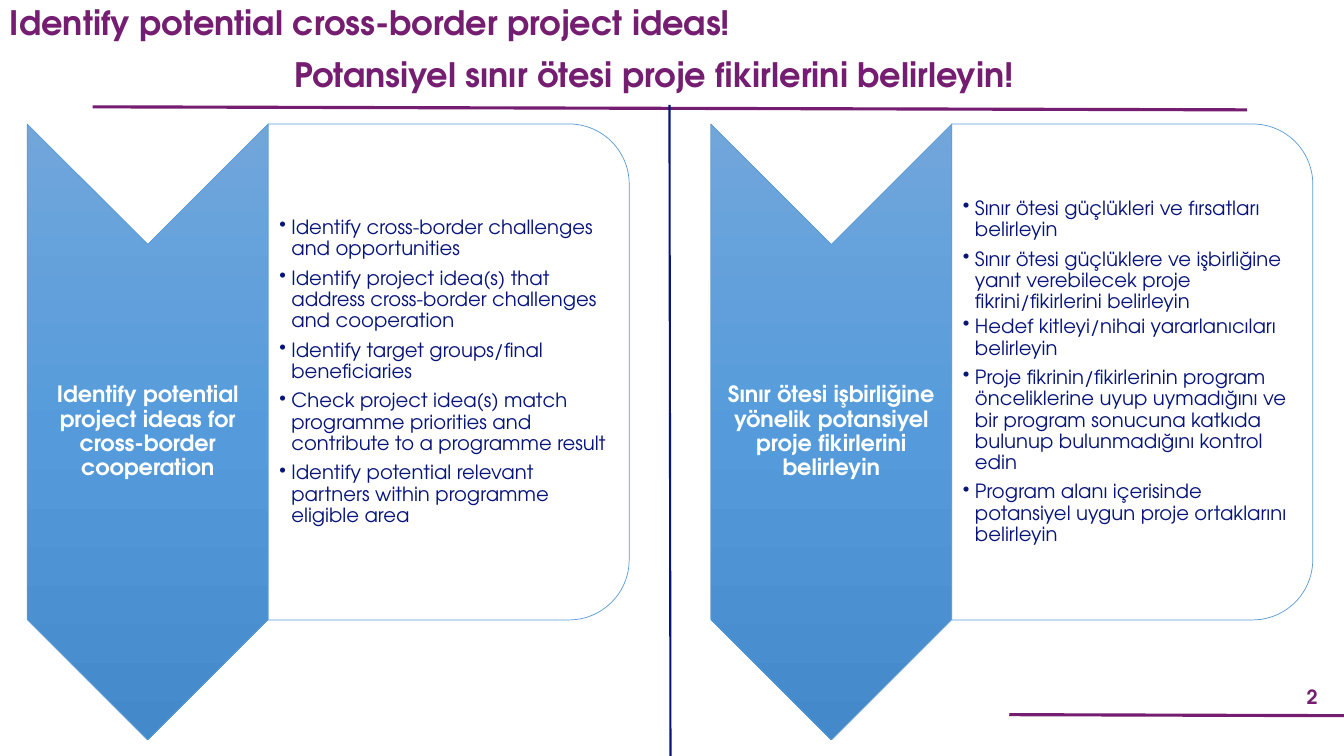
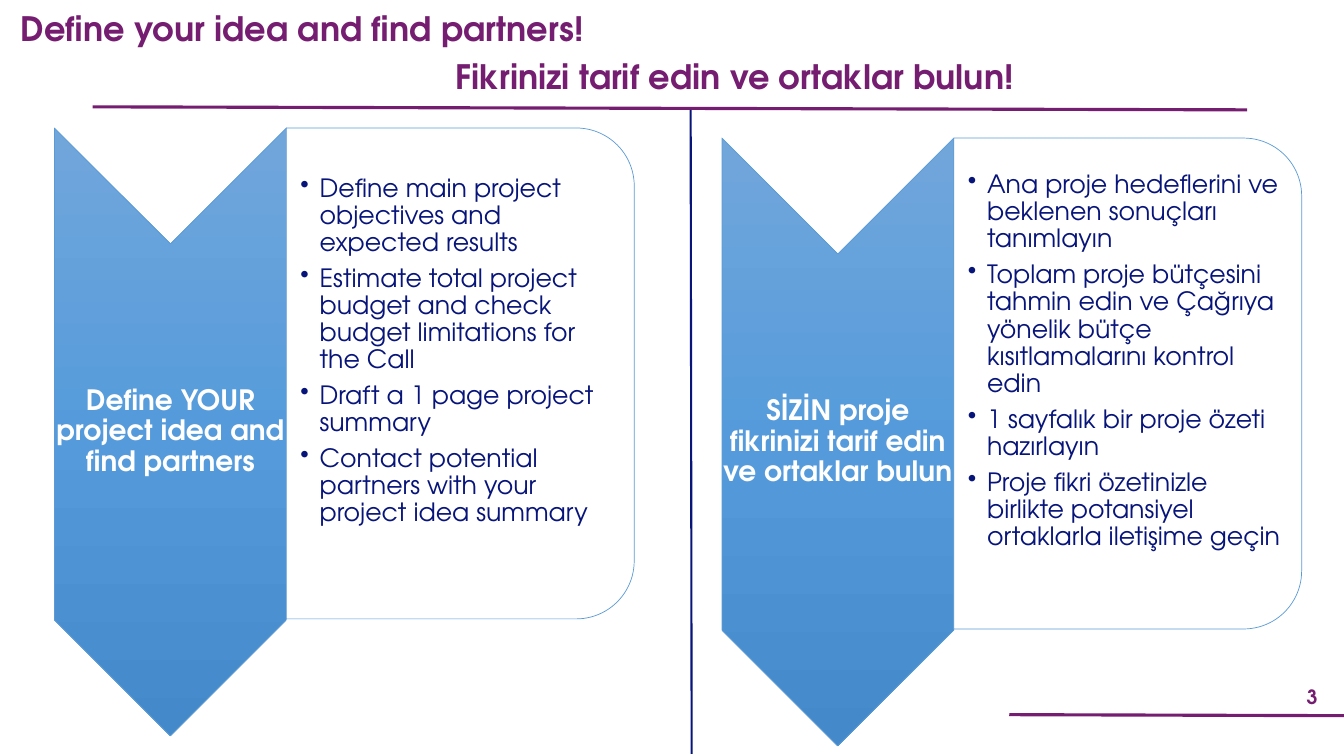
from copy import deepcopy
from dataclasses import dataclass

from lxml import etree
from pptx import Presentation
from pptx import util as u
from pptx.dml.color import RGBColor
from pptx.enum import shapes, text
from pptx.oxml.ns import qn


@dataclass(frozen=True)
class Theme:
    font: str = "TeX Gyre Adventor"
    purple: str = "751D70"
    navy: str = "07147A"
    white: str = "FFFFFF"
    outline: str = "5B9BD5"
    gradient: tuple[str, ...] = ("71A6DB", "559BDB", "448ACA")
    title_size: int = 24
    number_size: int = 14


@dataclass(frozen=True)
class Box:
    left: float
    top: float
    width: float
    height: float

    def emu(self) -> list[int]:
        return [u.Inches(v) for v in (self.left, self.top, self.width, self.height)]

    def before_quarter_turn(self) -> "Box":
        """Box that fills this area once it is rotated by 90 degrees."""
        shift = (self.width - self.height) / 2
        return Box(self.left + shift, self.top - shift, self.height, self.width)


@dataclass(frozen=True)
class Title:
    text: str
    left: float
    top: float


@dataclass(frozen=True)
class Column:
    left: float
    top: float
    heading: str
    bullets: list[str]
    tight_after: int | None = None  # index of a bullet with a smaller gap below


@dataclass(frozen=True)
class ColumnStyle:
    arrow_width: float
    arrow_height: float
    panel_width: float
    panel_height: float
    heading_size: int
    bullet_size: int
    bullet_indent: float
    left_inset: float
    bottom_inset: float


@dataclass(frozen=True)
class Page:
    number: int
    titles: list[Title]
    divider: tuple[float, float, float, float]
    style: ColumnStyle
    columns: list[Column]


THEME = Theme()
DEFAULT_INSETS = (0.1, 0.05, 0.1, 0.05)
THIN_INSETS = (0.01, 0.01, 0.01, 0.01)
BULLET_GAP, TIGHT_GAP = 6, 3
PANEL_MARGIN = 0.17

PAGES = [
    Page(
        number=2,
        titles=[
            Title("Identify potential cross-border project ideas!", 0, 0.01),
            Title("Potansiyel sınır ötesi proje fikirlerini belirleyin!", 2.82, 0.53),
        ],
        divider=(6.64, 1.04, 6.65, 7.5),
        style=ColumnStyle(2.39, 6.11, 3.58, 4.92, 16, 14, 0.12, 0.11, 0.01),
        columns=[
            Column(0.27, 1.23, "Identify potential project ideas for cross-border cooperation", [
                "Identify cross-border challenges and opportunities",
                "Identify project idea(s) that address cross-border challenges and cooperation",
                "Identify target groups/final beneficiaries",
                "Check project idea(s) match programme priorities and contribute to a programme result",
                "Identify potential relevant partners within programme eligible area",
            ]),
            Column(7.05, 1.23,
                   "Sınır ötesi işbirliğine yönelik potansiyel proje fikirlerini belirleyin", [
                "Sınır ötesi güçlükleri ve fırsatları belirleyin",
                "Sınır ötesi güçlüklere ve işbirliğine yanıt verebilecek proje "
                "fikrini/fikirlerini belirleyin",
                "Hedef kitleyi/nihai yararlanıcıları belirleyin",
                "Proje fikrinin/fikirlerinin program önceliklerine uyup uymadığını ve "
                "bir program sonucuna katkıda bulunup bulunmadığını kontrol edin",
                "Program alanı içerisinde potansiyel uygun proje ortaklarını belirleyin",
            ], tight_after=1),
        ],
    ),
    Page(
        number=3,
        titles=[
            Title("Define your idea and find partners!", 0.11, 0.07),
            Title("Fikrinizi tarif edin ve ortaklar bulun!", 4.42, 0.55),
        ],
        divider=(6.85, 1.09, 6.86, 7.48),
        style=ColumnStyle(2.3, 6.03, 3.45, 4.87, 20, 18, 0.19, 0.14, 0.45),
        columns=[
            Column(0.54, 1.27, "Define YOUR project idea and find partners", [
                "Define main project objectives and expected results",
                "Estimate total project budget and check budget limitations for the Call",
                "Draft a 1 page project summary",
                "Contact potential partners with your project idea summary",
            ]),
            Column(7.16, 1.37, "SİZİN proje fikrinizi tarif edin ve ortaklar bulun", [
                "Ana proje hedeflerini ve beklenen sonuçları tanımlayın",
                "Toplam proje bütçesini tahmin edin ve Çağrıya yönelik bütçe "
                "kısıtlamalarını kontrol edin",
                "1 sayfalık bir proje özeti hazırlayın",
                "Proje fikri özetinizle birlikte potansiyel ortaklarla iletişime geçin",
            ]),
        ],
    ),
]


# Drawing helpers
def add_text(slide, box: Box, paragraphs: list[str], *, size: int, color: str,
             bold: bool = False, align=text.PP_ALIGN.LEFT, anchor=text.MSO_ANCHOR.TOP,
             insets=DEFAULT_INSETS, line_spacing: float = 0.9,
             bullet_indent: float | None = None, tight_after: int | None = None) -> None:
    frame = slide.shapes.add_textbox(*box.emu()).text_frame
    frame.word_wrap = True
    frame.vertical_anchor = anchor
    (frame.margin_left, frame.margin_top,
     frame.margin_right, frame.margin_bottom) = map(u.Inches, insets)
    for index, words in enumerate(paragraphs):
        paragraph = frame.add_paragraph() if index else frame.paragraphs[0]
        if bullet_indent is not None:
            properties = paragraph._p.get_or_add_pPr()
            properties.set("marL", str(u.Inches(bullet_indent)))
            properties.set("indent", str(-u.Inches(bullet_indent)))
            etree.SubElement(properties, qn("a:buChar"), char="•")
            paragraph.space_after = u.Pt(TIGHT_GAP if index == tight_after else BULLET_GAP)
        paragraph.alignment = align
        paragraph.line_spacing = line_spacing
        run = paragraph.add_run()
        run.text = words
        run.font.name = THEME.font
        run.font.size = u.Pt(size)
        run.font.bold = bold
        run.font.color.rgb = RGBColor.from_string(color)


def add_line(slide, ends: tuple[float, float, float, float], color: str, width: float) -> None:
    connector = slide.shapes.add_connector(
        shapes.MSO_CONNECTOR.STRAIGHT, *map(u.Inches, ends))
    connector.line.color.rgb = RGBColor.from_string(color)
    connector.line.width = u.Pt(width)
    etree.SubElement(connector._element.spPr, qn("a:effectLst"))


def add_turned_shape(slide, kind, area: Box):
    shape = slide.shapes.add_shape(kind, *area.before_quarter_turn().emu())
    shape.rotation = 90
    shape.shadow.inherit = False
    shape.line.color.rgb = RGBColor.from_string(THEME.outline)
    shape.line.width = u.Pt(0.5)
    return shape


def fill_gradient(shape, colors: tuple[str, ...]) -> None:
    shape.fill.gradient()
    shape.fill.gradient_angle = 0
    first_stop = next(shape._element.spPr.iter(qn("a:gs")))
    first_stop.addnext(deepcopy(first_stop))
    for index, (stop, color) in enumerate(zip(shape.fill.gradient_stops, colors)):
        stop.position = index / (len(colors) - 1)
        stop.color.rgb = RGBColor.from_string(color)


# Slide parts
def draw_frame(slide, page: Page) -> None:
    add_line(slide, (0.92, 1.06, 12.37, 1.09), THEME.purple, 2.25)
    add_line(slide, (10.01, 7.09, 13.33, 7.1), THEME.purple, 2.25)
    add_text(slide, Box(12.7, 6.73, 0.63, 0.36), [str(page.number)],
             size=THEME.number_size, color=THEME.purple, bold=True, line_spacing=1.0,
             align=text.PP_ALIGN.CENTER, anchor=text.MSO_ANCHOR.MIDDLE)
    for title in page.titles:
        add_text(slide, Box(title.left, title.top, 9.73, 0.65), [title.text],
                 size=THEME.title_size, color=THEME.purple, bold=True)
    add_line(slide, page.divider, THEME.navy, 1.5)


def draw_column(slide, column: Column, style: ColumnStyle) -> None:
    # Down-pointing arrow; its notch is half as deep as the arrow is wide
    arrow = add_turned_shape(
        slide, shapes.MSO_SHAPE.CHEVRON,
        Box(column.left, column.top, style.arrow_width, style.arrow_height))
    fill_gradient(arrow, THEME.gradient)
    add_text(slide,
             Box(column.left, column.top + style.arrow_width / 2,
                 style.arrow_width, style.arrow_height - style.arrow_width),
             [column.heading], size=style.heading_size, color=THEME.white, bold=True,
             align=text.PP_ALIGN.CENTER, anchor=text.MSO_ANCHOR.MIDDLE, insets=THIN_INSETS)

    # Panel with bullets
    panel_left = column.left + style.arrow_width
    panel = add_turned_shape(
        slide, shapes.MSO_SHAPE.ROUND_2_SAME_RECTANGLE,
        Box(panel_left, column.top, style.panel_width, style.panel_height))
    panel.fill.solid()
    panel.fill.fore_color.rgb = RGBColor.from_string(THEME.white)
    add_text(slide,
             Box(panel_left, column.top + PANEL_MARGIN, style.panel_width - PANEL_MARGIN,
                 style.panel_height - 2 * PANEL_MARGIN),
             column.bullets, size=style.bullet_size, color=THEME.navy,
             anchor=text.MSO_ANCHOR.MIDDLE,
             insets=(style.left_inset, 0.01, 0.01, style.bottom_inset),
             bullet_indent=style.bullet_indent, tight_after=column.tight_after)


def main() -> None:
    presentation = Presentation()
    presentation.slide_width = u.Inches(13.33)
    presentation.slide_height = u.Inches(7.5)
    for page in PAGES:
        slide = presentation.slides.add_slide(presentation.slide_layouts[6])
        draw_frame(slide, page)
        for column in page.columns:
            draw_column(slide, column, page.style)
    presentation.save("out.pptx")


if __name__ == "__main__":
    main()
